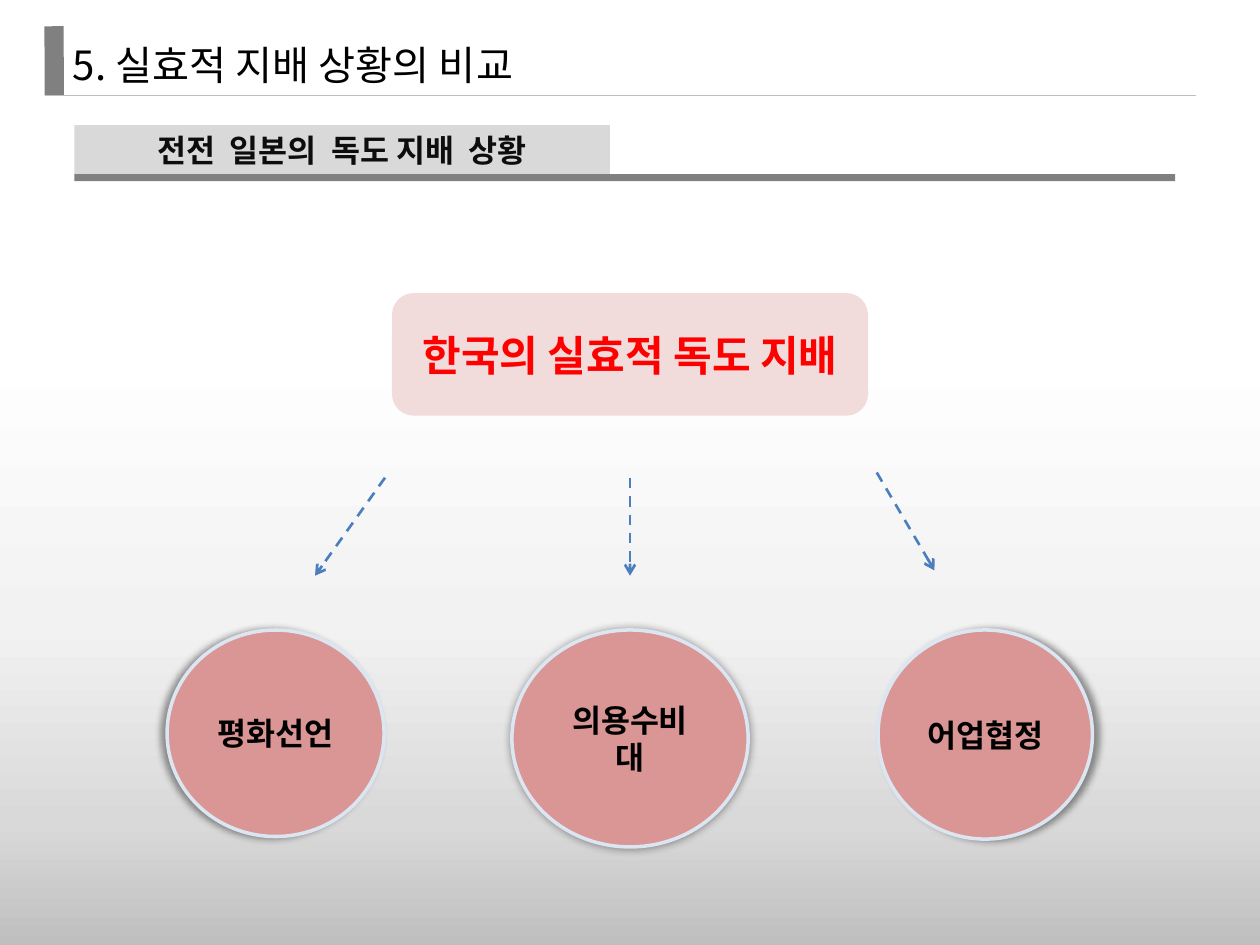
import pptx
import pptx.util
import pptx.dml.color
import pptx.enum.dml
import pptx.enum.shapes
import pptx.enum.text
import pptx.oxml
import pptx.oxml.ns

Pt = pptx.util.Pt
SHAPE = pptx.enum.shapes.MSO_SHAPE
ALIGN = pptx.enum.text.PP_ALIGN
ANCHOR = pptx.enum.text.MSO_ANCHOR
FACE = "Noto Sans CJK KR"
NS = pptx.oxml.ns.nsdecls("a")


def color(code):
    return pptx.dml.color.RGBColor.from_string(code)


def xml(text):
    """Parse one element whose root tag holds the mark NS."""
    return pptx.oxml.parse_xml(text.replace("NS", NS, 1))


def write(shape, text, size, code, bold=True, align=ALIGN.CENTER):
    frame = shape.text_frame
    frame.text = text
    frame.vertical_anchor = ANCHOR.MIDDLE
    para = frame.paragraphs[0]
    para.alignment = align
    font = para.font
    font.size, font.bold, font.name = Pt(size), bold, FACE
    font.color.rgb = color(code)
    props = para._p.pPr.find(pptx.oxml.ns.qn("a:defRPr"))
    props.append(xml(f'<a:ea NS typeface="{FACE}"/>'))


def block(slide, kind, box, fill, edge=None):
    shape = slide.shapes.add_shape(kind, *map(Pt, box))
    shape.shadow.inherit = False
    shape.fill.solid()
    shape.fill.fore_color.rgb = color(fill)
    if edge:
        shape.line.color.rgb = color(edge)
        shape.line.width = Pt(2)
    else:
        shape.line.fill.background()
    return shape


def rule(slide, start, end, code, width):
    line = slide.shapes.add_connector(
        pptx.enum.shapes.MSO_CONNECTOR.STRAIGHT, *map(Pt, start + end))
    line.line.color.rgb = color(code)
    line.line.width = Pt(width)
    line._element.spPr.append(xml("<a:effectLst NS/>"))
    return line


def arrow(slide, start, end):
    line = rule(slide, start, end, "4B7EBC", 1.5)
    line.line.dash_style = pptx.enum.dml.MSO_LINE.DASH
    line.line._get_or_add_ln().append(xml('<a:tailEnd NS type="arrow"/>'))


def circle(slide, box, text, blur, dist, angle):
    shape = block(slide, SHAPE.OVAL, box, "D99694", "DCE6F2")
    write(shape, text, 18, "000000")
    shape._element.spPr.find(pptx.oxml.ns.qn("a:effectLst")).append(xml(
        f'<a:outerShdw NS blurRad="{Pt(blur)}" dist="{Pt(dist)}" '
        f'dir="{angle * 60000}" rotWithShape="0"><a:srgbClr val="000000">'
        '<a:alpha val="40000"/></a:srgbClr></a:outerShdw>'))


def backdrop(slide):
    stops = [(37, "FFFFFF"), (66, "F2F2F2"), (87, "D9D9D9"), (100, "BFBFBF")]
    fill = slide.background.fill
    fill.gradient()
    fill.gradient_angle = 270
    group = fill.gradient_stops[0]._gs.getparent()
    for stop in list(group):
        group.remove(stop)
    for place, code in stops:
        group.append(xml(f'<a:gs NS pos="{place * 1000}">'
                         f'<a:srgbClr val="{code}"/></a:gs>'))


def header(slide, box, text):
    left, top, width, height = box
    bar = block(slide, SHAPE.RECTANGLE, (left, top, 11, height), "808080")
    bar.rotation = 359.7
    base = top + height
    rule(slide, (left, base), (left + width, base), "BFBFBF", 0.75)
    title = slide.shapes.title
    title.left, title.top = Pt(left + 9), Pt(top + 4.5)
    title.width, title.height = Pt(width - 9), Pt(height - 4.5)
    write(title, text, 23, "000000", False, ALIGN.LEFT)
    title.text_frame.word_wrap = False


def section(slide, box, text):
    left, top, width, height = box
    tab = block(slide, SHAPE.RECTANGLE, (left, top, 306, height - 4), "D9D9D9")
    write(tab, text, 18, "0D0D0D")
    block(slide, SHAPE.RECTANGLE, (left, top + height - 4, width, 4), "808080")


def diagram(slide, box):
    """Main claim on top, three arrows, three round grounds below."""
    left, top, width, height = box
    mid = left + width / 2
    claim = block(slide, SHAPE.ROUNDED_RECTANGLE,
                  (mid - 135, top, 270, 68), "F2DCDB", "F2DCDB")
    write(claim, "한국의 실효적 독도 지배", 24, "FF0000")
    for start, end, drop in ((-140, -180, 104.5), (0, 0, 104.5),
                             (141, 174, 101.5)):
        arrow(slide, (mid + start, top + drop), (mid + end, top + drop + 56))
    for x, wide, tall, text, blur, dist, angle in (
            (-202.5, 124, 118, "평화선언", 4, 3, 180),
            (0, 135, 124, "의용수비대", 5, 0, 0),
            (203, 122.5, 119.5, "어업협정", 4, 3, 0)):
        circle(slide, (mid + x - wide / 2, top + 191.5, wide, tall),
               text, blur, dist, angle)


def main():
    deck = pptx.Presentation()
    deck.slide_width, deck.slide_height = Pt(720), Pt(540)
    slide = deck.slides.add_slide(deck.slide_layouts.get_by_name("Title Only"))
    backdrop(slide)
    header(slide, (25.5, 15, 658, 39.5), "5. 실효적 지배 상황의 비교")
    section(slide, (42.5, 71.5, 629, 32), "전전  일본의  독도 지배  상황")
    diagram(slide, (96, 168.5, 528, 316))
    deck.save("out.pptx")


if __name__ == "__main__":
    main()
